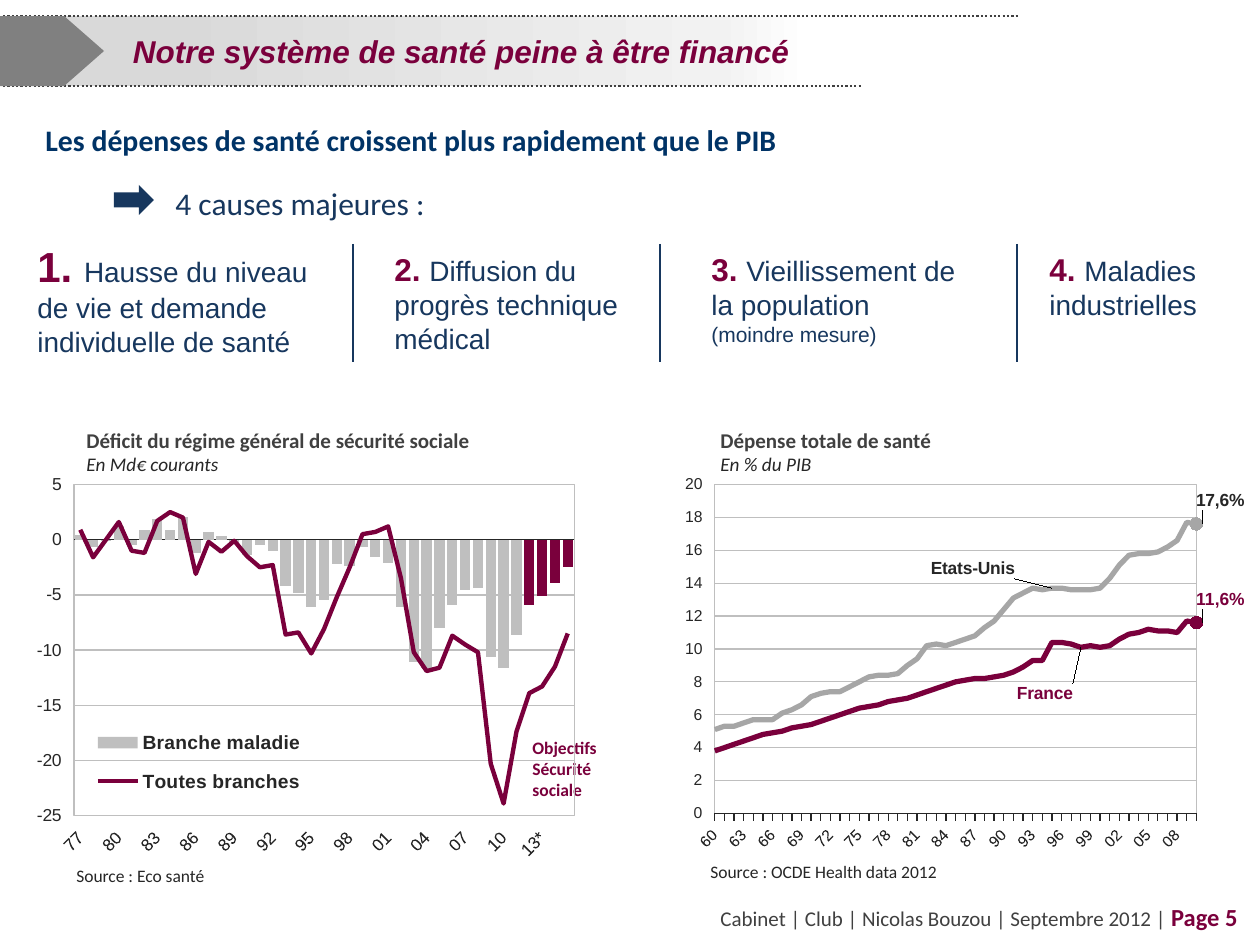
from copy import deepcopy
from dataclasses import dataclass

from lxml.etree import SubElement
from pptx import Presentation
from pptx.chart.data import CategoryChartData
from pptx.dml.color import RGBColor as Rgb
from pptx.enum.chart import XL_CHART_TYPE as ChartType
from pptx.enum.chart import XL_LABEL_POSITION as LabelPosition
from pptx.enum.chart import XL_LEGEND_POSITION as LegendPosition
from pptx.enum.chart import XL_MARKER_STYLE as Marker
from pptx.enum.chart import XL_TICK_LABEL_POSITION as TickLabel
from pptx.enum.chart import XL_TICK_MARK as Tick
from pptx.enum.dml import MSO_LINE as Dash
from pptx.enum.shapes import MSO_CONNECTOR as Connector
from pptx.enum.shapes import MSO_SHAPE as Preset
from pptx.enum.text import MSO_ANCHOR as Anchor
from pptx.enum.text import PP_ALIGN as Align
from pptx.oxml import parse_xml
from pptx.oxml.ns import qn
from pptx.util import Pt


@dataclass(frozen=True)
class Theme:
    plum: Rgb = Rgb.from_string("7A003C")
    navy: Rgb = Rgb.from_string("17375E")
    heading: Rgb = Rgb.from_string("003366")
    dark: Rgb = Rgb.from_string("404040")
    ink: Rgb = Rgb.from_string("262626")
    arrow: Rgb = Rgb.from_string("808080")
    silver: Rgb = Rgb.from_string("BFBFBF")
    grey: Rgb = Rgb.from_string("A6A6A6")
    fade: tuple = ((14, "D9D9D9"), (62, "F2F2F2"), (70, "FFFFFF"))
    sans: str = "Arial"
    body: str = "Calibri"
    title: int = 18
    subtitle: int = 17
    cause: int = 16
    caption: int = 12
    unit: int = 11
    small: int = 10
    tiny: int = 9


THEME = Theme()
PX = 914400 / 126
CHART_NS = "http://schemas.openxmlformats.org/drawingml/2006/chart"

DEFICIT_YEARS = [f"{(77 + i) % 100:02d}" + ("*" if i > 34 else "") for i in range(39)]
HEALTH_BRANCH = [
    0.4, -0.7, -0.1, 1.2, -0.5, 0.9, 1.9, 0.9, 2.1, -1.2, 0.7, 0.3, -0.4, -1.4, -0.5, -1, -4.2, -4.8, -6.1, -5.5,
    -2.2, -2.4, -0.7, -1.6, -2.1, -6.1, -11.1, -11.6, -8, -5.9, -4.6, -4.4, -10.6, -11.6, -8.6, -5.9, -5.1, -3.9, -2.5]
ALL_BRANCHES = [
    0.9, -1.6, 0, 1.6, -1, -1.2, 1.7, 2.5, 2, -3.1, -0.2, -1.1, -0.1, -1.5, -2.5, -2.3, -8.6, -8.4, -10.3, -8.1,
    -5.2, -2.5, 0.5, 0.7, 1.2, -3.5, -10.2, -11.9, -11.6, -8.7, -9.5, -10.2, -20.3, -23.9, -17.4, -13.9, -13.3,
    -11.5, -8.5]
SPENDING_YEARS = [f"{(60 + i) % 100:02d}" for i in range(51)]
FRANCE = [
    3.8, 4, 4.2, 4.4, 4.6, 4.8, 4.9, 5, 5.2, 5.3, 5.4, 5.6, 5.8, 6, 6.2, 6.4, 6.5, 6.6, 6.8, 6.9, 7, 7.2, 7.4, 7.6,
    7.8, 8, 8.1, 8.2, 8.2, 8.3, 8.4, 8.6, 8.9, 9.3, 9.3, 10.4, 10.4, 10.3, 10.1, 10.2, 10.1, 10.2, 10.6, 10.9, 11,
    11.2, 11.1, 11.1, 11, 11.7, 11.6]
UNITED_STATES = [
    5.1, 5.3, 5.3, 5.5, 5.7, 5.7, 5.7, 6.1, 6.3, 6.6, 7.1, 7.3, 7.4, 7.4, 7.7, 8, 8.3, 8.4, 8.4, 8.5, 9, 9.4, 10.2,
    10.3, 10.2, 10.4, 10.6, 10.8, 11.3, 11.7, 12.4, 13.1, 13.4, 13.7, 13.6, 13.7, 13.7, 13.6, 13.6, 13.6, 13.7, 14.3,
    15.1, 15.7, 15.8, 15.8, 15.9, 16.2, 16.6, 17.7, 17.6]


def emu(*lengths):
    return [round(length * PX) for length in lengths]


def style(font, size, color, name=THEME.body, bold=False, italic=False):
    font.size, font.name, font.bold, font.italic = Pt(size), name, bold, italic
    font.color.rgb = color


def fill_text(frame, paragraphs, align=Align.LEFT):
    frame.word_wrap = True
    for index, spans in enumerate(paragraphs):
        para = frame.add_paragraph() if index else frame.paragraphs[0]
        para.alignment = align
        for text, *look in spans:
            span = para.add_run()
            span.text = text
            style(span.font, *look)


def add_text(page, box, paragraphs, align=Align.LEFT):
    fill_text(page.shapes.add_textbox(*emu(*box)).text_frame, paragraphs, align)


def add_preset(page, preset, box, color=None):
    shape = page.shapes.add_shape(preset, *emu(*box))
    shape.shadow.inherit = False
    shape.line.fill.background()
    if color is not None:
        shape.fill.solid()
        shape.fill.fore_color.rgb = color
    return shape


def add_line(page, start, end, color, width, dash=None):
    line = page.shapes.add_connector(Connector.STRAIGHT, *emu(*start, *end))
    line.line.color.rgb, line.line.width = color, Pt(width)
    if dash:
        line.line.dash_style = dash
    SubElement(line._element.spPr, qn("a:effectLst"))


def add_banner(page, box):
    left, top, width, height = box
    band = add_preset(page, Preset.RECTANGLE, box)
    band.fill.gradient()
    band.fill.gradient_angle = 0
    stops = band._element.spPr.find(".//" + qn("a:gsLst"))
    stops.append(deepcopy(stops[-1]))
    for stop, (percent, color) in zip(band.fill.gradient_stops, THEME.fade):
        stop.position, stop.color.rgb = percent / 100, Rgb.from_string(color)
    frame = band.text_frame
    frame.margin_left, frame.vertical_anchor = emu(130)[0], Anchor.MIDDLE
    fill_text(frame, [[("Notre système de santé peine à être financé",
                        THEME.title, THEME.plum, THEME.sans, True, True)]])
    for y, length in ((top, 1017), (top + height, 858)):
        add_line(page, (left, y), (left + length, y), THEME.dark, 1.25, Dash.ROUND_DOT)
    pointer = add_preset(page, Preset.PENTAGON, (0, top, 104, height), THEME.arrow)
    pointer.adjustments[0] = 0.57


def add_introduction(page, box):
    left, top, width, height = box
    add_text(page, box, [[("Les dépenses de santé croissent plus rapidement que le PIB",
                           THEME.subtitle, THEME.heading, THEME.body, True)]])
    add_preset(page, Preset.RIGHT_ARROW, (left + 81, top + 69, 40, 30), THEME.navy)
    add_text(page, (left + 130, top + 62, 320, 50), [[("4 causes majeures :", THEME.title, THEME.navy)]])


def add_causes(page, box):
    left, top, width, height = box
    causes = [
        (0, -10, 318, 24, "Hausse du niveau de vie et demande individuelle de santé", None),
        (357, 0, 268, 18, "Diffusion du progrès technique médical", None),
        (674, 0, 277, 18, "Vieillissement de la population", "(moindre mesure)"),
        (1012, 0, 198, 18, "Maladies industrielles", None)]
    for number, (x, y, span, size, cause, remark) in enumerate(causes, 1):
        paragraphs = [[(f"{number}. ", size, THEME.plum, THEME.sans, True),
                       (cause, THEME.cause, THEME.navy, THEME.sans)]]
        if remark:
            paragraphs.append([(remark, THEME.caption, THEME.navy, THEME.sans)])
        add_text(page, (left + x, top + y, span, height), paragraphs)
    for x in (328, 635, 992):
        add_line(page, (left + x, top), (left + x, top + height), THEME.navy, 0.75)


def manual_layout(x, y, width=None, height=None, inner=False):
    parts = '<c:layoutTarget val="inner"/>' if inner else ""
    if width:
        parts += '<c:xMode val="edge"/><c:yMode val="edge"/>'
    for tag, value in zip("xywh", (x, y, width, height)):
        parts += f'<c:{tag} val="{value}"/>' if value is not None else ""
    return parse_xml(f'<c:layout xmlns:c="{CHART_NS}"><c:manualLayout>{parts}</c:manualLayout></c:layout>')


def chart_tag(tag, value):
    return parse_xml(f'<c:{tag} xmlns:c="{CHART_NS}" val="{value}"/>')


def add_chart(page, box, kind, years, series, size, limits, plot, crossing):
    data = CategoryChartData()
    data.categories = years
    for name, values in series:
        data.add_series(name, values)
    chart = page.shapes.add_chart(kind, *emu(*box), data).chart
    style(chart.font, size, THEME.ink, THEME.sans)
    chart.has_title = chart.has_legend = False
    area = chart._chartSpace.chart.plotArea
    for old in area.findall(qn("c:layout")):
        area.remove(old)
    area.insert(0, manual_layout(*plot, inner=True))
    area.append(parse_xml(
        f'<c:spPr xmlns:c="{CHART_NS}" xmlns:a="http://schemas.openxmlformats.org/drawingml/2006/main">'
        f'<a:noFill/><a:ln w="9525"><a:solidFill><a:srgbClr val="{THEME.silver}"/></a:solidFill></a:ln></c:spPr>'))
    values, dates = chart.value_axis, chart.category_axis
    values.minimum_scale, values.maximum_scale, values.major_unit = limits
    values.tick_labels.number_format, values.tick_labels.number_format_is_linked = "0", False
    values.format.line.fill.background()
    values.major_gridlines.format.line.color.rgb = THEME.silver
    values.major_gridlines.format.line.width = Pt(0.75)
    for old in values._element.findall(qn("c:crossBetween")):
        values._element.remove(old)
    values._element.find(qn("c:crosses")).addnext(chart_tag("crossBetween", crossing))
    dates.tick_label_position = TickLabel.LOW
    dates.format.line.color.rgb, dates.format.line.width = THEME.ink, Pt(0.75)
    style(dates.tick_labels.font, size, THEME.ink, THEME.sans)
    dates._element.find(qn("c:txPr")).find(qn("a:bodyPr")).set("rot", "-2700000")
    last = dates._element.find(qn("c:noMultiLvlLbl"))
    for tag, step in (("tickLblSkip", 3), ("tickMarkSkip", 1)):
        last.addprevious(chart_tag(tag, step))
    chart.plots[0].vary_by_categories = False
    return chart


def style_line(series, color, width):
    series.smooth = False
    series.marker.style = Marker.NONE
    series.format.line.color.rgb, series.format.line.width = color, Pt(width)


def add_caption(page, box, title, unit, source, source_top):
    left, top, width, height = box
    add_text(page, (left + 39, top, 480, 62), [
        [(title, THEME.caption, THEME.dark, THEME.body, True)],
        [(unit, THEME.unit, THEME.ink, THEME.body, False, True)]])
    add_text(page, (left + 29, top + source_top, 280, 34), [[(source, THEME.small, THEME.ink)]])


def add_deficit(page, box):
    left, top, width, height = box
    add_caption(page, box, "Déficit du régime général de sécurité sociale", "En Md€ courants",
                "Source : Eco santé", 438)
    note = (THEME.small, THEME.plum, THEME.body, True)
    add_text(page, (left + 485, top + 310, 118, 77), [[("Objectifs", *note)], [("Sécurité sociale", *note)]])
    chart = add_chart(page, (left, top + 52, width, height), ChartType.COLUMN_CLUSTERED, DEFICIT_YEARS,
                      [("Branche maladie", HEALTH_BRANCH), ("Toutes branches", ALL_BRANCHES)],
                      THEME.small, (-25, 5, 5), (0.07, 0.03, 0.9, 0.86), "between")
    chart.category_axis.major_tick_mark = Tick.NONE
    bars = chart.plots[0]
    bars.gap_width = 24
    columns = bars.series[0]
    columns.invert_if_negative = False
    for fill, color in [(columns.format.fill, THEME.silver)] + [
            (columns.points[i].format.fill, THEME.plum) for i in range(35, 39)]:
        fill.solid()
        fill.fore_color.rgb = color
    group = parse_xml(f'<c:lineChart xmlns:c="{CHART_NS}"><c:grouping val="standard"/>'
                      '<c:varyColors val="0"/><c:marker val="1"/></c:lineChart>')
    bar_group = chart._chartSpace.chart.plotArea.find(qn("c:barChart"))
    moved = bar_group.findall(qn("c:ser"))[1]
    for old in moved.findall(qn("c:invertIfNegative")):
        moved.remove(old)
    group.insert(2, moved)
    group.extend(deepcopy(axis) for axis in bar_group.findall(qn("c:axId")))
    bar_group.addnext(group)
    style_line(chart.plots[1].series[0], THEME.plum, 2.5)
    chart.has_legend = True
    legend = chart.legend
    legend.position, legend.include_in_layout = LegendPosition.RIGHT, False
    style(legend.font, THEME.unit, THEME.ink, THEME.sans, True)
    legend._element.find(qn("c:legendPos")).addnext(manual_layout(0.08, 0.63, 0.43, 0.24))


def add_spending(page, box):
    left, top, width, height = box
    add_caption(page, box, "Dépense totale de santé", "En % du PIB", "Source : OCDE Health data 2012", 434)
    chart = add_chart(page, (left, top + 52, width, height), ChartType.LINE, SPENDING_YEARS,
                      [("France", FRANCE), ("Etats-Unis", UNITED_STATES)],
                      THEME.tiny, (0, 20, 2), (0.08, 0.03, 0.84, 0.85), "midCat")
    looks = [
        (THEME.plum, THEME.plum, [(38, "France", -0.12, 0.12), (50, "11,6%", -0.02, -0.06)]),
        (THEME.grey, THEME.ink, [(35, "Etats-Unis", -0.22, -0.05), (50, "17,6%", -0.02, -0.06)])]
    for series, (color, text_color, labels) in zip(chart.plots[0].series, looks):
        style_line(series, color, 3)
        end = series.points[50]
        end.marker.style, end.marker.size = Marker.CIRCLE, 7
        end.marker.format.fill.solid()
        end.marker.format.fill.fore_color.rgb = color
        end.marker.format.line.color.rgb = color
        end.format.line.color.rgb, end.format.line.width = color, Pt(3)
        for index, text, x, y in labels:
            label = series.points[index].data_label
            fill_text(label.text_frame, [[(text, THEME.small, text_color, THEME.sans, True)]])
            label.position = LabelPosition.RIGHT
            entry = next(item for item in series._element.iter(qn("c:dLbl"))
                         if item.find(qn("c:idx")).get("val") == str(index))
            entry.find(qn("c:idx")).addnext(manual_layout(x, y))


def add_footer(page, box):
    add_text(page, box, [[("Cabinet | Club | Nicolas Bouzou | Septembre 2012 | ", THEME.caption, THEME.dark),
                          ("Page 5", 14, THEME.plum, THEME.body, True)]], Align.RIGHT)


def main():
    deck = Presentation()
    deck.slide_width, deck.slide_height = emu(1260, 945)
    page = deck.slides.add_slide(deck.slide_layouts[6])
    add_footer(page, (353, 896, 897, 49))
    add_banner(page, (3, 16, 1153, 70))
    add_introduction(page, (33, 116, 845, 69))
    add_causes(page, (25, 244, 1210, 118))
    add_deficit(page, (35, 421, 556, 387))
    add_spending(page, (669, 421, 576, 387))
    deck.save("out.pptx")


if __name__ == "__main__":
    main()
